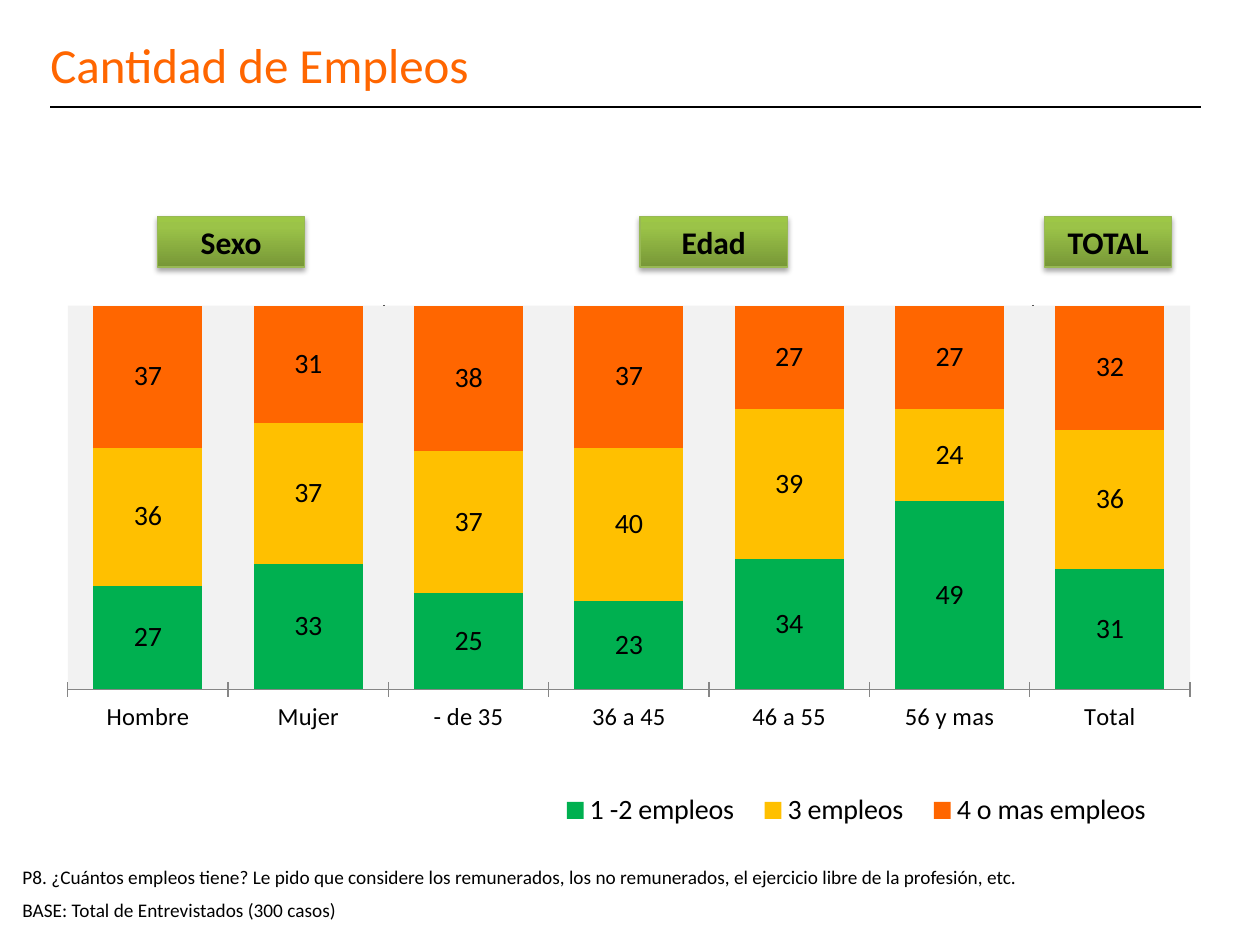
from lxml import etree
from pptx import Presentation
from pptx import util as u
from pptx.chart.data import CategoryChartData
from pptx.dml.color import RGBColor
from pptx.enum import chart as ch, shapes, text
from pptx.oxml import parse_xml
from pptx.oxml.ns import nsdecls, qn

FONT = "Calibri"
COLORS = {"black": "000000", "orange": "FF6600", "yellow": "FFC000",
          "green": "00B050", "plot": "F2F2F2", "axis": "868686",
          "edge": "98B955"}
TAG_GRADIENT = [(0, "779737"), (80, "9BC348"), (100, "9DC746")]
CATEGORIES = ["Hombre", "Mujer", "- de 35", "36 a 45", "46 a 55",
              "56 y mas", "Total"]
SERIES = [("1 -2 empleos", "green", [27, 33, 25, 23, 34, 49, 31]),
          ("3 empleos", "yellow", [36, 37, 37, 40, 39, 24, 36]),
          ("4 o mas empleos", "orange", [37, 31, 38, 37, 27, 27, 32])]
TAGS = [("Sexo", 1.25, 1.17), ("Edad", 5.08, 1.17), ("TOTAL", 8.29, 1.01)]
NOTES = [("P8. ¿Cuántos empleos tiene? Le pido que considere los remunerados, "
          "los no remunerados, el ejercicio libre de la profesión, etc.", 6.82),
         ("BASE: Total de Entrevistados (300 casos)", 7.08)]


def color(name):
    return RGBColor.from_string(COLORS[name])


def style_font(font, size, name="black", bold=False):
    font.name, font.size, font.bold = FONT, u.Pt(size), bold
    font.color.rgb = color(name)


def write(shape, words, size, name="black", bold=False, align=text.PP_ALIGN.LEFT):
    para = shape.text_frame.paragraphs[0]
    para.alignment = align
    span = para.add_run()
    span.text = words
    style_font(span.font, size, name, bold)


def add_title(page, words):
    title = page.shapes.title
    title.left, title.top = u.Inches(0.3), u.Inches(0.16)
    title.width, title.height = u.Inches(6.34), u.Inches(0.69)
    title.text_frame.vertical_anchor = text.MSO_ANCHOR.MIDDLE
    write(title, words, 28, "orange")


def add_note(page, words, top):
    box = page.shapes.add_textbox(u.Inches(0.08), u.Inches(top),
                                  u.Inches(9.53), u.Inches(0.3))
    box.text_frame.word_wrap = True
    write(box, words, 11)


def add_line(page, start, end, width):
    line = page.shapes.add_connector(shapes.MSO_CONNECTOR.STRAIGHT,
                                     *map(u.Inches, start + end))
    line.line.color.rgb = color("black")
    line.line.width = u.Pt(width)
    etree.SubElement(line._element.spPr, qn("a:effectLst"))


def add_tag(page, words, left, width):
    """Heading block with a vertical gradient and a soft shadow below."""
    tag = page.shapes.add_shape(shapes.MSO_SHAPE.RECTANGLE, u.Inches(left),
                                u.Inches(1.72), u.Inches(width), u.Inches(0.4))
    stops = "".join(f'<a:gs pos="{place * 1000}"><a:srgbClr val="{shade}"/></a:gs>'
                    for place, shade in TAG_GRADIENT)
    tag._element.spPr.find(qn("a:prstGeom")).addnext(parse_xml(
        f'<a:gradFill rotWithShape="1" {nsdecls("a")}><a:gsLst>{stops}</a:gsLst>'
        '<a:lin ang="16200000" scaled="0"/></a:gradFill>'))
    tag.line.color.rgb = color("edge")
    tag.line.width = u.Pt(0.75)
    tag.shadow.inherit = False
    tag._element.spPr.find(qn("a:effectLst")).append(parse_xml(
        f'<a:outerShdw blurRad="{u.Pt(3.1)}" dist="{u.Pt(1.8)}" dir="5400000" '
        f'rotWithShape="0" {nsdecls("a")}><a:srgbClr val="{COLORS["black"]}">'
        '<a:alpha val="35000"/></a:srgbClr></a:outerShdw>'))
    tag.text_frame.vertical_anchor = text.MSO_ANCHOR.MIDDLE
    write(tag, words, 18, bold=True, align=text.PP_ALIGN.CENTER)


def set_layout(element, left, top, width, height, inner=False):
    """Place a chart part by fractions of the chart's size."""
    for old in element.findall(qn("c:layout")):
        element.remove(old)
    target = '<c:layoutTarget val="inner"/>' if inner else ""
    places = "".join(f'<c:{key} val="{value}"/>' for key, value in
                     zip("xywh", (left, top, width, height)))
    layout = parse_xml(
        f'<c:layout {nsdecls("c")}><c:manualLayout>{target}<c:xMode val="edge"/>'
        f'<c:yMode val="edge"/>{places}</c:manualLayout></c:layout>')
    if inner:
        element.insert(0, layout)
    else:
        element.find(qn("c:legendPos")).addnext(layout)


def style_series(series, name):
    series.format.fill.solid()
    series.format.fill.fore_color.rgb = color(name)
    labels = series.data_labels
    labels.show_value = True
    labels.position = ch.XL_LABEL_POSITION.CENTER
    labels.number_format, labels.number_format_is_linked = "0", False
    style_font(labels.font, 16)


def add_jobs_chart(page):
    data = CategoryChartData(number_format="0")
    data.categories = CATEGORIES
    for name, _, values in SERIES:
        data.add_series(name, values)
    chart = page.shapes.add_chart(
        ch.XL_CHART_TYPE.COLUMN_STACKED_100, u.Inches(0.31), u.Inches(2.03),
        u.Inches(9.14), u.Inches(4.61), data).chart
    style_font(chart.font, 18)
    chart.has_title = False

    plot = chart.plots[0]
    plot.gap_width, plot.overlap, plot.vary_by_categories = 47, 100, False
    for series, (_, name, _) in zip(plot.series, SERIES):
        style_series(series, name)

    chart.value_axis.visible = False
    chart.value_axis.has_major_gridlines = False
    axis = chart.category_axis
    axis.major_tick_mark = ch.XL_TICK_MARK.CROSS
    axis.format.line.color.rgb = color("axis")
    style_font(axis.tick_labels.font, 14)

    chart.has_legend = True
    chart.legend.position = ch.XL_LEGEND_POSITION.BOTTOM
    chart.legend.include_in_layout = False
    style_font(chart.legend.font, 16)
    set_layout(chart.legend._element, 0.44, 0.91, 0.54, 0.09)

    area = chart._chartSpace.chart.plotArea
    set_layout(area, 0.025, 0.086, 0.975, 0.661, inner=True)
    area.append(parse_xml(
        f'<c:spPr {nsdecls("c", "a")}><a:solidFill><a:srgbClr '
        f'val="{COLORS["plot"]}"/></a:solidFill></c:spPr>'))


def main():
    deck = Presentation()
    deck.slide_width, deck.slide_height = u.Inches(10), u.Inches(7.5)
    page = deck.slides.add_slide(deck.slide_layouts[5])
    for words, top in NOTES:
        add_note(page, words, top)
    for left in (3.05, 8.2):
        add_line(page, (left, 2.42), (left, 5.47), 1)
    add_title(page, "Cantidad de Empleos")
    add_line(page, (0.4, 0.85), (9.53, 0.85), 0.75)
    add_jobs_chart(page)
    for words, left, width in TAGS:
        add_tag(page, words, left, width)
    deck.save("out.pptx")


if __name__ == "__main__":
    main()
